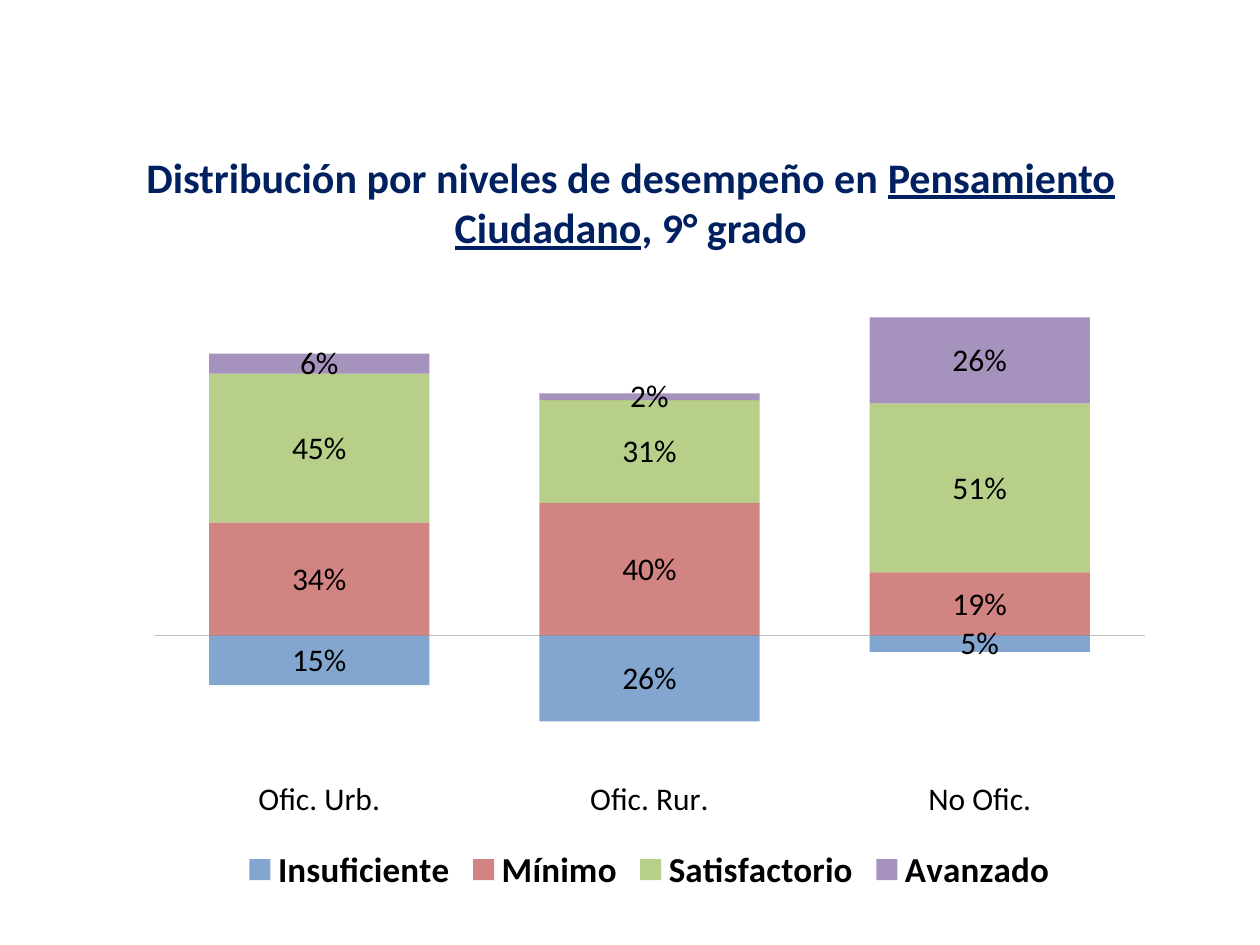
from lxml import etree
from pptx import Presentation
from pptx.chart.data import CategoryChartData
from pptx.dml.color import RGBColor
from pptx.enum.chart import (XL_CHART_TYPE, XL_LABEL_POSITION, XL_LEGEND_POSITION,
                             XL_TICK_LABEL_POSITION, XL_TICK_MARK)
from pptx.enum.text import PP_ALIGN
from pptx.oxml.ns import qn
from pptx.util import Pt

STACKED = XL_CHART_TYPE.COLUMN_STACKED
LABEL_CENTER = XL_LABEL_POSITION.CENTER
LEGEND_BOTTOM = XL_LEGEND_POSITION.BOTTOM
LABELS_LOW = XL_TICK_LABEL_POSITION.LOW
LABELS_NONE = XL_TICK_LABEL_POSITION.NONE
NO_TICK = XL_TICK_MARK.NONE
CENTER = PP_ALIGN.CENTER

COLORS = {
    "title": "002060", "text": "000000", "axis": "BFBFBF",
    "Insuficiente": "4F81BD", "Mínimo": "C0504D",
    "Satisfactorio": "9BBB59", "Avanzado": "8064A2",
}
SCHOOLS = ["Ofic. Urb.", "Ofic. Rur.", "No Ofic."]
LEVELS = {
    "Insuficiente": (-0.15, -0.26, -0.05),
    "Mínimo": (0.34, 0.40, 0.19),
    "Satisfactorio": (0.45, 0.31, 0.51),
    "Avanzado": (0.06, 0.02, 0.26),
}


def format_font(font, size=18, color="text", bold=False, underline=False):
    font.name = "Calibri"
    font.size = Pt(size)
    font.bold = bold
    font.underline = underline
    font.color.rgb = RGBColor.from_string(COLORS[color])


def add_run(paragraph, text, **style):
    run = paragraph.add_run()
    run.text = text
    format_font(run.font, **style)


class SlideBuilder:
    def __init__(self, slide, opacity=70):
        self.slide = slide
        self.opacity = opacity

    def title(self, parts, left, top, width, height):
        box = self.slide.shapes.add_textbox(Pt(left), Pt(top), Pt(width), Pt(height))
        box.text_frame.word_wrap = True
        paragraph = box.text_frame.paragraphs[0]
        paragraph.alignment = CENTER
        for text, underline in parts:
            add_run(paragraph, text, size=24, color="title", bold=True, underline=underline)

    def stacked_chart(self, categories, levels, left, top, width, height):
        data = CategoryChartData(number_format="0%")
        data.categories = categories
        for name, shares in levels.items():
            data.add_series(name, shares)
        chart = self.slide.shapes.add_chart(
            STACKED, Pt(left), Pt(top), Pt(width), Pt(height), data).chart
        chart.has_title = False
        format_font(chart.font)
        self.axes(chart)
        chart.has_legend = True
        chart.legend.position = LEGEND_BOTTOM
        chart.legend.include_in_layout = False
        format_font(chart.legend.font, size=20, bold=True)
        plot = chart.plots[0]
        plot.gap_width = 50
        plot.overlap = 100
        plot.vary_by_categories = False
        for series in plot.series:
            self.level(series)

    def axes(self, chart):
        schools, shares = chart.category_axis, chart.value_axis
        for axis, labels in ((schools, LABELS_LOW), (shares, LABELS_NONE)):
            axis.has_major_gridlines = False
            axis.major_tick_mark = axis.minor_tick_mark = NO_TICK
            axis.tick_label_position = labels
            format_font(axis.tick_labels.font)
        schools.format.line.color.rgb = RGBColor.from_string(COLORS["axis"])
        schools.format.line.width = Pt(0.75)
        shares.format.line.fill.background()
        shares.minimum_scale, shares.maximum_scale = -0.4, 1.2

    def level(self, series):
        series.invert_if_negative = False
        fill = series.format.fill
        fill.solid()
        fill.fore_color.rgb = RGBColor.from_string(COLORS[series.name])
        color = next(series.format._element.iter(qn("a:srgbClr")))
        etree.SubElement(color, qn("a:alpha"), val=str(self.opacity * 1000))
        labels = series.data_labels
        labels.show_value = True
        labels.position = LABEL_CENTER
        labels.number_format = "0%;0%"
        labels.number_format_is_linked = False
        format_font(labels.font)


def main():
    deck = Presentation()
    deck.slide_width, deck.slide_height = Pt(720), Pt(540)
    builder = SlideBuilder(deck.slides.add_slide(deck.slide_layouts[6]))
    builder.stacked_chart(SCHOOLS, LEVELS, 76.3, 128.2, 589.7, 385.2)
    builder.title([("Distribución por niveles de desempeño en ", False),
                   ("Pensamiento Ciudadano", True),
                   (", 9° grado", False)], 20.2, 82.8, 680.4, 65.5)
    deck.save("out.pptx")


if __name__ == "__main__":
    main()
